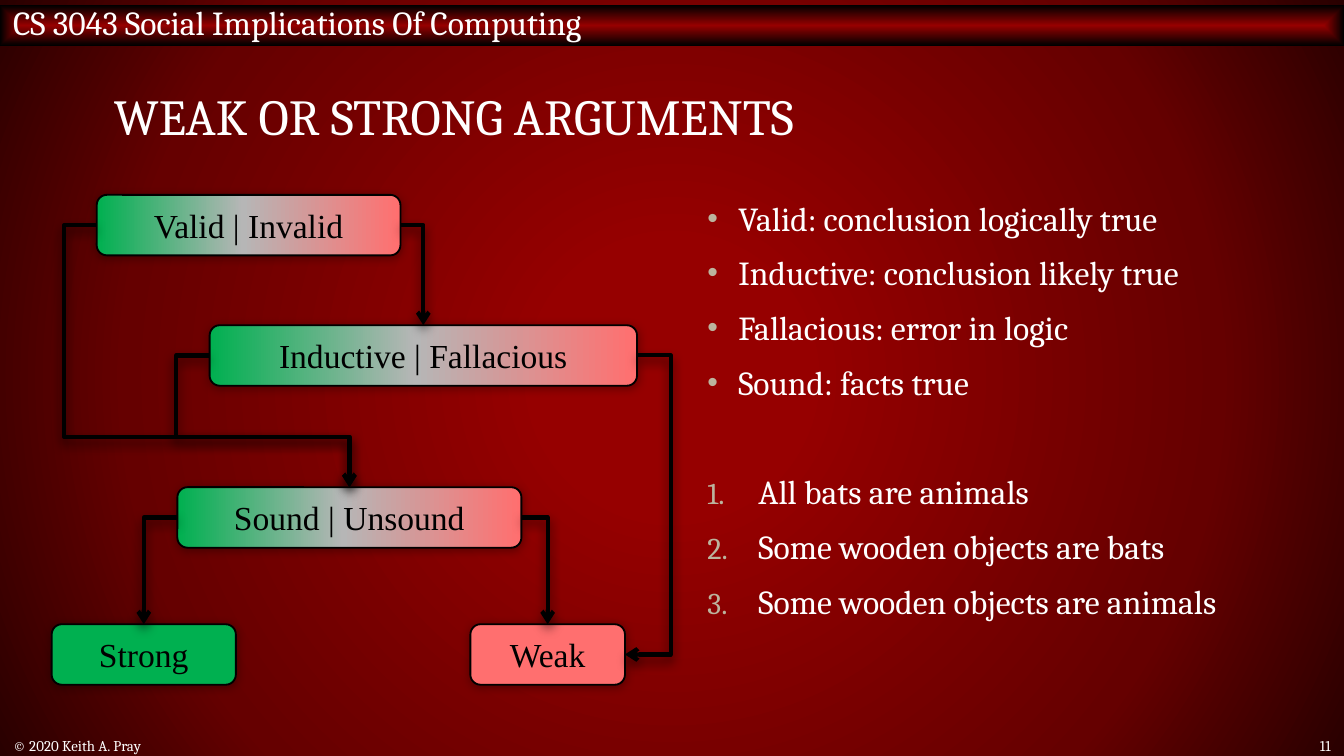
from lxml import etree
from pptx import Presentation
from pptx.dml.color import RGBColor
from pptx.enum.shapes import MSO_CONNECTOR, MSO_SHAPE
from pptx.enum.text import MSO_ANCHOR, PP_ALIGN
from pptx.oxml.ns import qn
from pptx.util import Inches, Pt

RECTANGLE, ROUNDED = MSO_SHAPE.RECTANGLE, MSO_SHAPE.ROUNDED_RECTANGLE
ELBOW = MSO_CONNECTOR.ELBOW
TOP, MIDDLE = MSO_ANCHOR.TOP, MSO_ANCHOR.MIDDLE
LEFT, CENTER, RIGHT = PP_ALIGN.LEFT, PP_ALIGN.CENTER, PP_ALIGN.RIGHT
TOP_SITE, LEFT_SITE, RIGHT_SITE = 0, 1, 3

BLACK = RGBColor(0x00, 0x00, 0x00)
WHITE = RGBColor(0xFF, 0xFF, 0xFF)
RED = RGBColor(0x96, 0x00, 0x00)
DARK_RED = RGBColor(0x65, 0x00, 0x00)
DEEP_RED = RGBColor(0x29, 0x00, 0x00)
GREEN = RGBColor(0x00, 0xB0, 0x50)
GRAY = RGBColor(0xB6, 0xB6, 0xB6)
PINK = RGBColor(0xFF, 0x6F, 0x6F)
SAND = RGBColor(0xBC, 0xB4, 0x9E)

COLUMNS = 100
ROWS = 56.25
BOX_ROWS = 4.5
FOOTER_ROWS = 1.6
GOOD_TO_BAD = [(0, GREEN), (48, GRAY), (100, PINK)]
DEFINITIONS = [
    "Valid: conclusion logically true",
    "Inductive: conclusion likely true",
    "Fallacious: error in logic",
    "Sound: facts true",
]
SYLLOGISM = [
    "All bats are animals",
    "Some wooden objects are bats",
    "Some wooden objects are animals",
]


def add_node(parent, tag, **attributes):
    node = etree.SubElement(parent, qn(tag))
    for name, value in attributes.items():
        node.set(name, str(value))
    return node


class SlideBuilder:
    """Draws styled elements on one slide, placed on a grid of square cells."""

    heading_font = "Cambria"
    box_font = "Times New Roman"

    def __init__(self, presentation):
        self.slide = presentation.slides.add_slide(presentation.slide_layouts[6])
        self.cell = presentation.slide_width / COLUMNS

    def place(self, *cells):
        return [round(value * self.cell) for value in cells]

    def gradient(self, fill, owner, stops, shade=None):
        fill.gradient()
        node = owner.find(".//" + qn("a:gradFill"))
        for child in list(node):
            node.remove(child)
        stop_list = add_node(node, "a:gsLst")
        for position, color in stops:
            stop = add_node(stop_list, "a:gs", pos=position * 1000)
            add_node(stop, "a:srgbClr", val=color)
        if shade:
            center = add_node(node, "a:path", path=shade)
            add_node(center, "a:fillToRect", l=50000, t=50000, r=50000, b=50000)
        else:
            add_node(node, "a:lin", ang=0, scaled=0)

    def background(self, stops):
        self.gradient(self.slide.background.fill, self.slide.element, stops, "circle")

    def shadow(self, shape, opacity, blur, distance):
        effects = add_node(shape.element.spPr, "a:effectLst")
        outer = add_node(effects, "a:outerShdw", blurRad=Pt(blur), dist=Pt(distance),
                         dir=5400000, rotWithShape=0)
        color = add_node(outer, "a:srgbClr", val=BLACK)
        add_node(color, "a:alpha", val=opacity * 1000)

    def style(self, paragraph, size, color, font, alignment=LEFT):
        paragraph.alignment = alignment
        for run in paragraph.runs:
            run.font.size = Pt(size)
            run.font.name = font
            run.font.color.rgb = color

    def text(self, text, area, size, alignment=LEFT, spacing=1.0):
        frame = self.slide.shapes.add_textbox(*self.place(*area)).text_frame
        frame.word_wrap = True
        frame.vertical_anchor = MIDDLE
        frame.text = text
        frame.paragraphs[0].line_spacing = spacing
        self.style(frame.paragraphs[0], size, WHITE, self.heading_font, alignment)

    def banner(self, text, area):
        shape = self.slide.shapes.add_shape(RECTANGLE, *self.place(*area))
        shape.shadow.inherit = False
        shape.line.fill.background()
        self.gradient(shape.fill, shape.element, [(0, RED), (100, BLACK)], "shape")
        frame = shape.text_frame
        frame.margin_top, frame.margin_bottom = 0, Inches(0.05)
        frame.vertical_anchor = MIDDLE
        frame.text = text
        self.style(frame.paragraphs[0], 18, WHITE, self.heading_font)

    def box(self, text, left, top, width, color=None):
        shape = self.slide.shapes.add_shape(
            ROUNDED, *self.place(left, top, width, BOX_ROWS))
        if color is None:
            self.gradient(shape.fill, shape.element, GOOD_TO_BAD)
        else:
            shape.fill.solid()
            shape.fill.fore_color.rgb = color
        shape.line.color.rgb = BLACK
        shape.line.width = Pt(1)
        self.shadow(shape, 32, 5, 1)
        shape.text_frame.vertical_anchor = MIDDLE
        shape.text_frame.text = text
        self.style(shape.text_frame.paragraphs[0], 18, BLACK, self.box_font, CENTER)
        return shape

    def arrow(self, start, start_site, end, end_site, turns=()):
        connector = self.slide.shapes.add_connector(ELBOW, 0, 0, 0, 0)
        connector.begin_connect(start, start_site)
        connector.end_connect(end, end_site)
        connector.line.color.rgb = BLACK
        connector.line.width = Pt(2.25)
        properties = connector.element.spPr
        add_node(properties.find(qn("a:ln")), "a:tailEnd", type="arrow")
        self.shadow(connector, 60, 6, 3)
        geometry = properties.find(qn("a:prstGeom"))
        geometry.set("prst", f"bentConnector{len(turns) + 2}")
        guides = geometry.find(qn("a:avLst"))
        spans = [(connector.begin_x, connector.end_x), (connector.begin_y, connector.end_y)]
        for number, (turn, (begin, finish)) in enumerate(zip(self.place(*turns), spans), 1):
            share = round((turn - begin) / (finish - begin) * 100000)
            add_node(guides, "a:gd", name=f"adj{number}", fmla=f"val {share}")

    def lists(self, area, groups):
        frame = self.slide.shapes.add_textbox(*self.place(*area)).text_frame
        frame.word_wrap = True
        frame.vertical_anchor = TOP
        paragraph = None
        for lines, indent, tag, marker, font, gap in groups:
            for index, line in enumerate(lines):
                first = paragraph is None
                paragraph = frame.paragraphs[0] if first else frame.add_paragraph()
                paragraph.text = line
                paragraph.line_spacing = 0.8
                paragraph.space_before = Pt(0 if first else 12 if index else gap)
                properties = paragraph._p.get_or_add_pPr()
                properties.set("marL", str(Inches(indent)))
                properties.set("indent", str(-Inches(indent)))
                add_node(add_node(properties, "a:buClr"), "a:srgbClr", val=SAND)
                add_node(properties, "a:buSzPct", val=90000)
                add_node(properties, "a:buFont", typeface=font)
                add_node(properties, tag, **marker)
                self.style(paragraph, 18, WHITE, self.heading_font)


def main():
    presentation = Presentation()
    presentation.slide_width = Inches(10)
    presentation.slide_height = round(presentation.slide_width * ROWS / COLUMNS)
    builder = SlideBuilder(presentation)
    builder.background([(17, RED), (71, DARK_RED), (100, DEEP_RED)])
    builder.banner("CS 3043 Social Implications Of Computing", (0, 0.4, COLUMNS, 3))
    builder.text("WEAK OR STRONG ARGUMENTS", (7.5, 4, 85, 10), 27, spacing=0.8)
    builder.lists((51.65, 14.8, 40.8, 36.7), [
        (DEFINITIONS, 0.23, "a:buChar", {"char": "•"}, "Arial", 0),
        (SYLLOGISM, 0.38, "a:buAutoNum", {"type": "arabicPeriod"}, "Cambria", 41.5),
    ])
    footer_top = ROWS - FOOTER_ROWS
    builder.text("© 2020 Keith A. Pray", (0, footer_top, 60.8, FOOTER_ROWS), 8)
    builder.text("11", (93.2, footer_top, 6.8, FOOTER_ROWS), 8, RIGHT)

    valid = builder.box("Valid | Invalid", 7.2, 14.5, 22.6)
    inductive = builder.box("Inductive | Fallacious", 15.6, 24.2, 31.8)
    sound = builder.box("Sound | Unsound", 13.2, 36.25, 25.6)
    weak = builder.box("Weak", 35, 46.45, 11.5, PINK)
    strong = builder.box("Strong", 3.85, 46.45, 13.7, GREEN)
    builder.arrow(valid, LEFT_SITE, sound, TOP_SITE, (4.75, 32.5))
    builder.arrow(inductive, RIGHT_SITE, weak, RIGHT_SITE, (49.9,))
    builder.arrow(sound, RIGHT_SITE, weak, TOP_SITE)
    builder.arrow(sound, LEFT_SITE, strong, TOP_SITE)
    builder.arrow(inductive, LEFT_SITE, sound, TOP_SITE, (13.1, 32.5))
    builder.arrow(valid, RIGHT_SITE, inductive, TOP_SITE)
    presentation.save("out.pptx")


if __name__ == "__main__":
    main()
